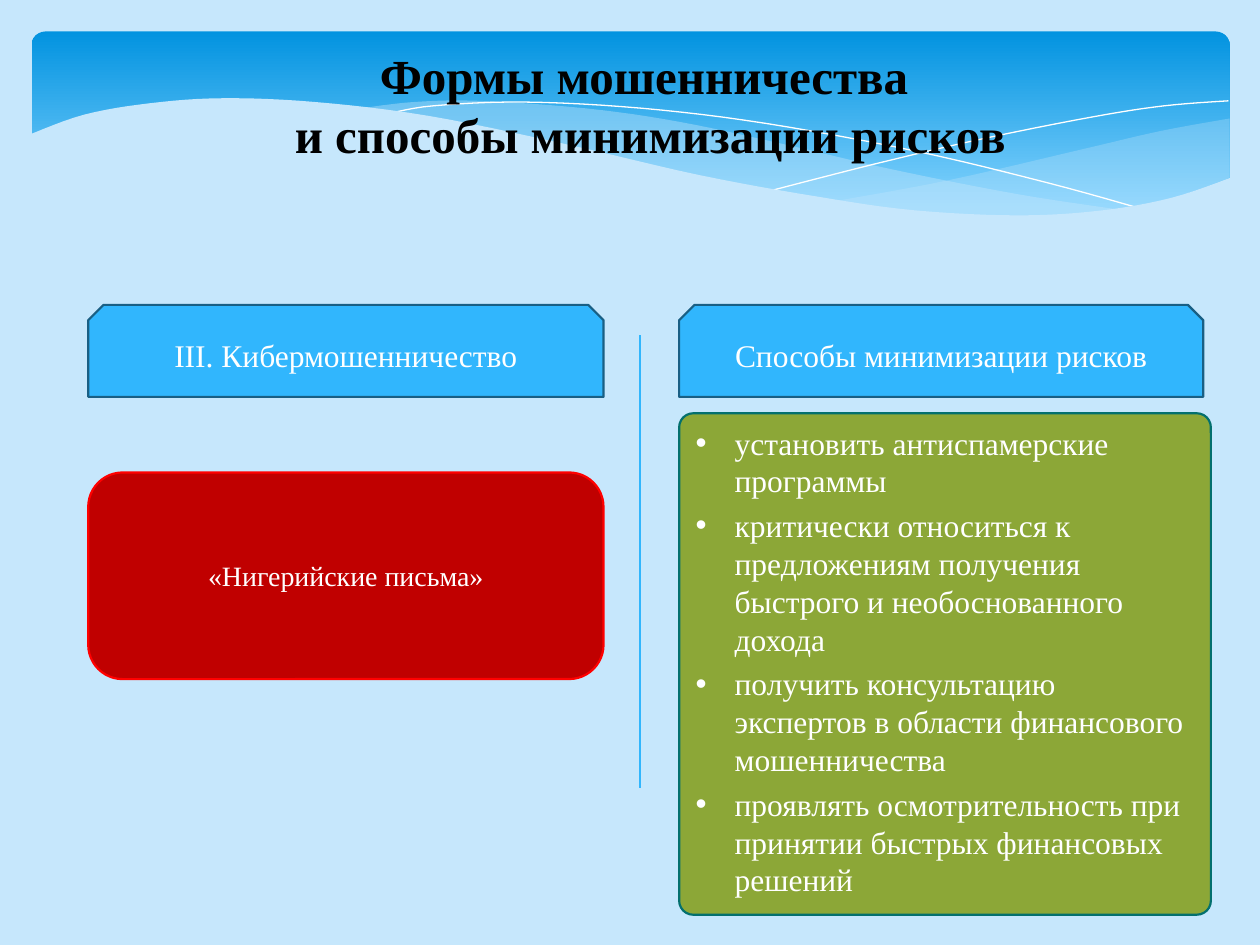
import pptx
import pptx.dml.color
import pptx.enum.shapes
import pptx.enum.text
import pptx.oxml
import pptx.oxml.ns
import pptx.util
from lxml import etree

Inches, Pt = pptx.util.Inches, pptx.util.Pt
KINDS = pptx.enum.shapes.MSO_SHAPE
ALIGN = pptx.enum.text.PP_ALIGN
ANCHOR = pptx.enum.text.MSO_ANCHOR

# Content
TITLE = "Формы мошенничества \vи способы минимизации рисков"
HEADINGS = ["III. Кибермошенничество", "Способы минимизации рисков"]
THREAT = "«Нигерийские письма»"
ADVICE = [
    "установить антиспамерские программы",
    "критически относиться к предложениям получения быстрого и необоснованного дохода",
    "получить консультацию экспертов в области финансового мошенничества",
    "проявлять осмотрительность при принятии быстрых финансовых решений",
]

COLORS = {
    "sky": "C6E7FC", "deep": "0293E0", "light": "83D3FE", "white": "FFFFFF",
    "black": "000000", "blue": "31B6FD", "navy": "195F84", "red": "C00000",
    "bright red": "FF0000", "green": "8CA737", "teal": "03706E",
}
FONT = "Times New Roman"

# Grid in inches: two columns (left, width) and rows (top, height)
WIDTH, HEIGHT = 10, 7.5
COLUMNS = [(0.7, 4.09), (5.39, 4.16)]
HEADING_ROW = (2.42, 0.73)
THREAT_ROW = (3.75, 1.64)
ADVICE_BOX = (5.39, 3.28, 4.22, 3.98)
BANNER_BOX = (0.25, 0.25, 9.51, 1.56)
TITLE_BOX = (1.41, 0.31, 7.5, 1.04)
DIVIDER = (5.08, 2.66, 6.25)

# Waves: curved runs are joined by straight edges
WAVES = [
    {"fill": "sky", "alpha": 29, "runs": [
        [(9.76, 0.94), (9.21, 1.04), (8.61, 1.18), (7.53, 1.43), (6.61, 1.6)],
        [(6.61, 1.6), (7.19, 1.67), (7.81, 1.72), (8.35, 1.72), (8.81, 1.67),
         (9.28, 1.58), (9.76, 1.41)]]},
    {"fill": "sky", "alpha": 40, "runs": [
        [(8.93, 1.67), (8.07, 1.54), (7.06, 1.34), (6.29, 1.16), (5.41, 0.97),
         (4.65, 0.86), (3.8, 0.8), (3.28, 0.81), (2.86, 0.86)],
        [(2.86, 0.86), (3.62, 0.97), (4.49, 1.16), (5.66, 1.43), (6.5, 1.58),
         (7.22, 1.68), (7.96, 1.73), (8.48, 1.72), (8.93, 1.67)]]},
    {"line": "white", "runs": [
        [(3.09, 0.9), (3.44, 0.84), (4.16, 0.81), (5.1, 0.86), (6.08, 0.98),
         (7.27, 1.2), (8.31, 1.45), (9.07, 1.66)]]},
    {"line": "white", "runs": [
        [(6.13, 1.51), (6.95, 1.3), (7.76, 1.11), (8.66, 0.93), (9.24, 0.84),
         (9.75, 0.8)]]},
    {"fill": "sky", "runs": [
        [(9.77, 1.41), (9.3, 1.57), (8.75, 1.67), (8.09, 1.71), (7.26, 1.67),
         (6.48, 1.56), (5.55, 1.39), (4.47, 1.14), (3.4, 0.92), (2.5, 0.81),
         (1.77, 0.78), (1.19, 0.82), (0.67, 0.91), (0.23, 1.07)],
        [(0.23, 2.24), (9.77, 2.24)]]},
]


def color(name):
    return pptx.dml.color.RGBColor.from_string(COLORS[name])


def inches(values):
    return [Inches(value) for value in values]


def smooth(points, steps=6):
    """Catmull-Rom curve through the points."""
    if len(points) < 3:
        return points
    padded = [points[0], *points, points[-1]]
    curve = [points[0]]
    for a, b, c, d in zip(padded, padded[1:], padded[2:], padded[3:]):
        for step in range(1, steps + 1):
            t = step / steps
            curve.append(tuple(
                (2 * q + (r - p) * t + (2 * p - 5 * q + 4 * r - s) * t ** 2
                 + (3 * q - p - 3 * r + s) * t ** 3) / 2
                for p, q, r, s in zip(a, b, c, d)))
    return curve


def paint(shape, fill=None, line=None, weight=1.25):
    shape.shadow.inherit = False
    if fill:
        shape.fill.solid()
        shape.fill.fore_color.rgb = color(fill)
    else:
        shape.fill.background()
    if line:
        shape.line.color.rgb = color(line)
        shape.line.width = Pt(weight)
    else:
        shape.line.fill.background()


def write(shape, texts, size, ink="white", bold=False, align=ALIGN.CENTER,
          anchor=ANCHOR.MIDDLE, **paragraph_format):
    frame = shape.text_frame
    frame.word_wrap = True
    frame.vertical_anchor = anchor
    frame.text = "\n".join(texts)
    for para in frame.paragraphs:
        for name, value in {"alignment": align, **paragraph_format}.items():
            setattr(para, name, value)
        for span in para.runs:
            for name, value in {"name": FONT, "size": Pt(size), "bold": bold}.items():
                setattr(span.font, name, value)
            span.font.color.rgb = color(ink)


def add_bullets(shape, indent=0.31):
    for para in shape.text_frame.paragraphs:
        properties = para._p.get_or_add_pPr()
        properties.set("marL", str(Inches(indent)))
        properties.set("indent", str(-Inches(indent)))
        for tag, key, value in [("a:buFont", "typeface", "Arial"),
                                ("a:buChar", "char", "•")]:
            etree.SubElement(properties, pptx.oxml.ns.qn(tag)).set(key, value)


def add_banner(page):
    banner = page.shapes.add_shape(KINDS.ROUNDED_RECTANGLE, *inches(BANNER_BOX))
    paint(banner)
    banner.adjustments[0] = 0.071
    banner.fill.gradient()
    banner.fill.gradient_angle = 270
    for stop, (position, name) in zip(banner.fill.gradient_stops,
                                      [(0, "deep"), (0.9, "light")]):
        stop.position = position
        stop.color.rgb = color(name)


def add_wave(page, wave):
    points = [tuple(inches(point)) for run in wave["runs"] for point in smooth(run)]
    builder = page.shapes.build_freeform(*points[0])
    builder.add_line_segments(points[1:], close="fill" in wave)
    shape = builder.convert_to_shape()
    paint(shape, wave.get("fill"), wave.get("line"), 0)
    if "alpha" in wave:
        tint = shape.element.spPr.find(".//" + pptx.oxml.ns.qn("a:srgbClr"))
        alpha = etree.SubElement(tint, pptx.oxml.ns.qn("a:alpha"))
        alpha.set("val", str(wave["alpha"] * 1000))


def main():
    deck = pptx.Presentation()
    deck.slide_width, deck.slide_height = inches((WIDTH, HEIGHT))
    page = deck.slides.add_slide(deck.slide_layouts[5])
    page.background.fill.solid()
    page.background.fill.fore_color.rgb = color("sky")

    # Banner with waves
    add_banner(page)
    for wave in WAVES:
        add_wave(page, wave)

    # Title, raised above the banner
    title = page.shapes.title
    title.left, title.top, title.width, title.height = inches(TITLE_BOX)
    write(title, [TITLE], 28, "black", bold=True)
    title.element.getparent().append(title.element)

    # Threat card
    left, width = COLUMNS[0]
    top, height = THREAT_ROW
    threat = page.shapes.add_shape(KINDS.ROUNDED_RECTANGLE,
                                   *inches((left, top, width, height)))
    paint(threat, "red", "bright red")
    write(threat, [THREAT], 16)

    # Column headings
    top, height = HEADING_ROW
    for (left, width), text in zip(COLUMNS, HEADINGS):
        heading = page.shapes.add_shape(KINDS.SNIP_2_SAME_RECTANGLE,
                                        *inches((left, top, width, height)))
        paint(heading, "blue", "navy")
        write(heading, [text], 18)

    # Advice list
    advice = page.shapes.add_shape(KINDS.ROUNDED_RECTANGLE, *inches(ADVICE_BOX))
    advice.adjustments[0] = 0.028
    paint(advice, "green", "teal")
    write(advice, ADVICE, 18, align=ALIGN.LEFT, anchor=ANCHOR.TOP,
          line_spacing=1.0, space_before=Pt(2), space_after=Pt(2))
    add_bullets(advice)

    # Divider between the columns
    x, start, end = DIVIDER
    divider = page.shapes.add_connector(pptx.enum.shapes.MSO_CONNECTOR.STRAIGHT,
                                        *inches((x, start, x, end)))
    divider.line.color.rgb = color("blue")
    divider.line.width = Pt(0.75)
    etree.SubElement(divider.element.spPr, pptx.oxml.ns.qn("a:effectLst"))

    deck.save("out.pptx")


if __name__ == "__main__":
    main()
